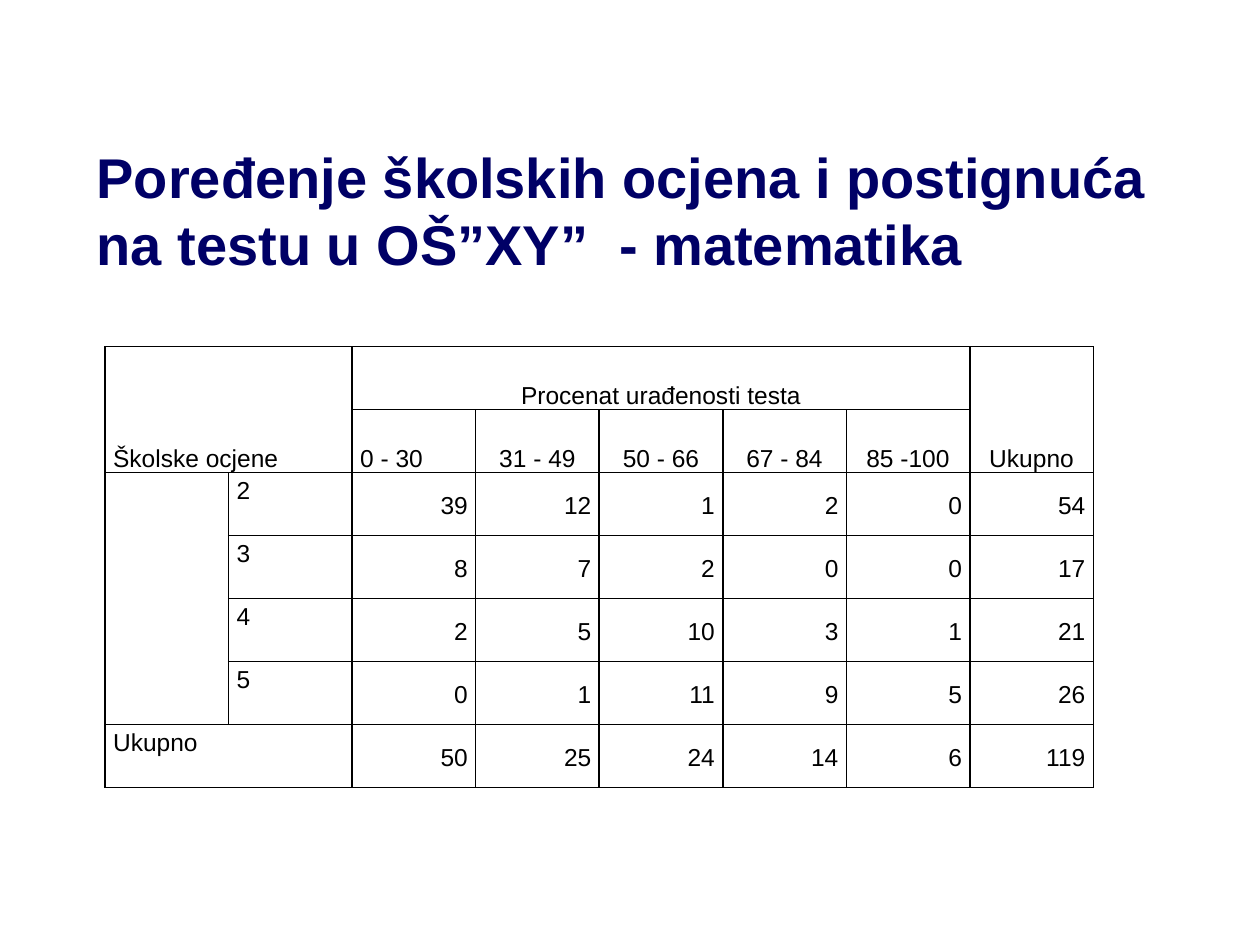
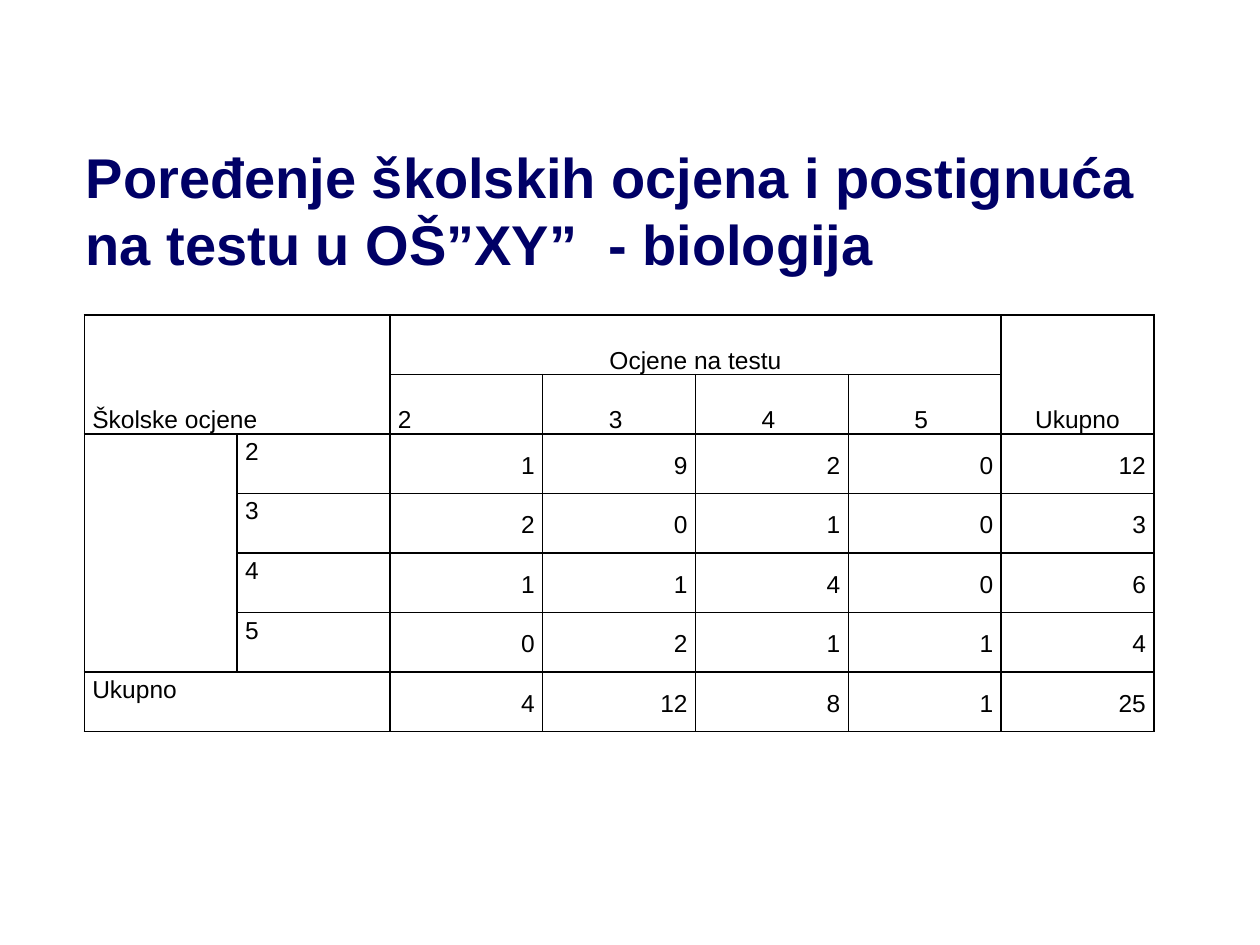
from pptx import Presentation
from pptx.dml.color import RGBColor
from pptx.enum.text import MSO_ANCHOR, PP_ALIGN
from pptx.oxml import parse_xml
from pptx.oxml.ns import nsdecls
from pptx.util import Cm, Pt

TOP, MIDDLE, BOTTOM = MSO_ANCHOR.TOP, MSO_ANCHOR.MIDDLE, MSO_ANCHOR.BOTTOM
LEFT, CENTER, RIGHT = PP_ALIGN.LEFT, PP_ALIGN.CENTER, PP_ALIGN.RIGHT
NAVY, BLACK, WHITE = "000066", "000000", "FFFFFF"
FONT = "Arial"
TITLE = "Poređenje školskih ocjena i postignuća na testu u OŠ”XY”  - "


def color(value):
    return RGBColor.from_string(value)


def write(tf, text, size=14, fill=BLACK, bold=False, align=LEFT, spacing=1.15):
    p = tf.paragraphs[0]
    p.alignment = align
    p.line_spacing = spacing
    r = p.add_run()
    r.text = text
    r.font.name = FONT
    r.font.size = Pt(size)
    r.font.bold = bold
    r.font.color.rgb = color(fill)


# Per subject: title box (left, width), table (left, top, column, row), all in cm
slides = [
    dict(subject="matematika", title=(1.7, 22.43), table=(2.12, 6.99, 2.49, 1.27),
         heading="Procenat urađenosti testa",
         columns=["0 - 30", "31 - 49", "50 - 66", "67 - 84", "85 -100"],
         counts=[("2", 39, 12, 1, 2, 0, 54),
                 ("3", 8, 7, 2, 0, 0, 17),
                 ("4", 2, 5, 10, 3, 1, 21),
                 ("5", 0, 1, 11, 9, 5, 26),
                 ("Ukupno", 50, 25, 24, 14, 6, 119)]),
    dict(subject="biologija", title=(1.48, 22.65), table=(1.7, 6.35, 3.08, 1.2),
         heading="Ocjene na testu",
         columns=["2", "3 ", "4 ", "5 "],
         counts=[("2", 1, 9, 2, 0, 12),
                 ("3", 2, 0, 1, 0, 3),
                 ("4", 1, 1, 4, 0, 6),
                 ("5", 0, 2, 1, 1, 4),
                 ("Ukupno", 4, 12, 8, 1, 25)]),
]

prs = Presentation()
prs.slide_width, prs.slide_height = Cm(25.4), Cm(19.05)

for data in slides:
    s = prs.slides.add_slide(prs.slide_layouts[6])

    # Title
    left, width = data["title"]
    sp = s.shapes.add_textbox(Cm(left), Cm(3.12), Cm(width), Cm(2.21))
    tf = sp.text_frame
    tf.word_wrap = True
    tf.vertical_anchor = MIDDLE
    write(tf, TITLE + data["subject"], size=32, fill=NAVY, bold=True, spacing=1.0)

    # Table grid: two header rows, two label columns, a total row and column
    left, top, col_width, row_height = data["table"]
    last_col = len(data["columns"]) + 2
    last_row = len(data["counts"]) + 1
    n_cols, n_rows = last_col + 1, last_row + 1
    table = s.shapes.add_table(n_rows, n_cols, Cm(left), Cm(top),
                               Cm(col_width * n_cols), Cm(row_height * n_rows)).table
    table.first_row = table.horz_banding = False
    for col in table.columns:
        col.width = Cm(col_width)
    for row in table.rows:
        row.height = Cm(row_height)

    # Borders, fill and margins of every cell
    for cell in table.iter_cells():
        cell.margin_left = cell.margin_right = Cm(0.16)
        cell.margin_top = cell.margin_bottom = 0
        tc_pr = cell._tc.get_or_add_tcPr()
        for side in ("lnL", "lnR", "lnT", "lnB"):
            tc_pr.append(parse_xml(
                f'<a:{side} {nsdecls("a")} w="12700"><a:solidFill>'
                f'<a:srgbClr val="{BLACK}"/></a:solidFill></a:{side}>'))
        cell.fill.solid()
        cell.fill.fore_color.rgb = color(WHITE)

    # Merged areas: first row, first column, last row, last column
    for r1, c1, r2, c2 in [(0, 0, 1, 1), (0, 2, 0, last_col - 1),
                           (0, last_col, 1, last_col),
                           (2, 0, last_row - 1, 0), (last_row, 0, last_row, 1)]:
        table.cell(r1, c1).merge(table.cell(r2, c2))

    # Cell texts: row, column, text, alignment, anchor
    entries = [(0, 0, "Školske ocjene", LEFT, BOTTOM),
               (0, 2, data["heading"], CENTER, BOTTOM),
               (0, last_col, "Ukupno", CENTER, BOTTOM)]
    for c, text in enumerate(data["columns"], 2):
        entries.append((1, c, text, LEFT if c == 2 else CENTER, BOTTOM))
    for r, (label, *values) in enumerate(data["counts"], 2):
        entries.append((r, 0 if r == last_row else 1, label, LEFT, TOP))
        for c, value in enumerate(values, 2):
            entries.append((r, c, str(value), RIGHT, MIDDLE))
    for r, c, text, align, anchor in entries:
        cell = table.cell(r, c)
        cell.vertical_anchor = anchor
        write(cell.text_frame, text, align=align)

prs.save("out.pptx")
